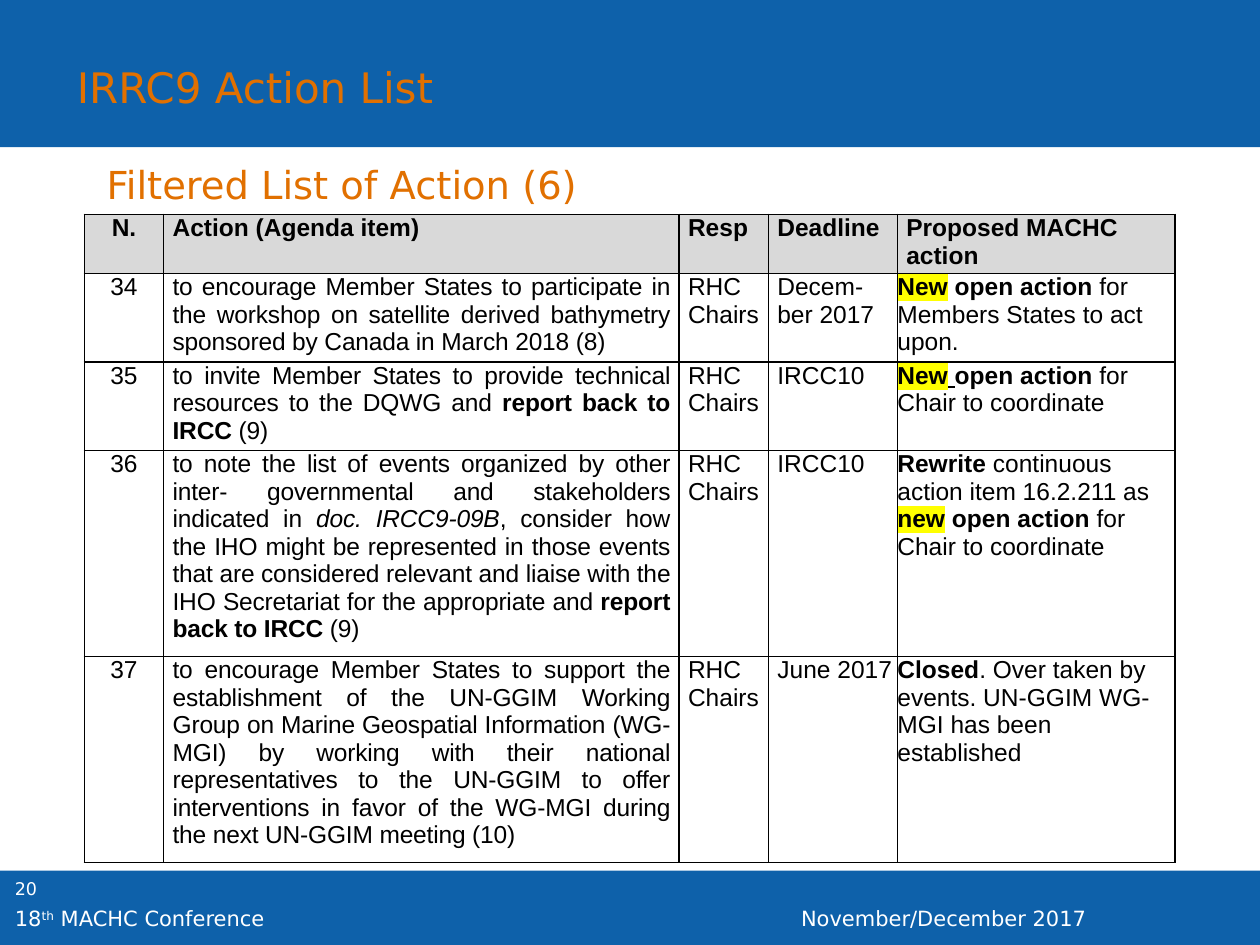
import pptx
import pptx.dml.color
import pptx.enum.shapes
import pptx.enum.text
import pptx.oxml
import pptx.oxml.ns
import pptx.util
from pptx.util import Cm

ALIGN = pptx.enum.text.PP_ALIGN
BLUE, ORANGE, WHITE, BLACK, GREY = "0E61AA", "E17000", "FFFFFF", "000000", "D9D9D9"
HEADING_FONT, TABLE_FONT = "DejaVu Sans", "Arial"

BANDS = [(0, 2.97), (17.55, 1.5)]

LABELS = [
    (0.05, 17.58, 1.98, 1.02, True, 10, WHITE, [("20", "")]),
    (15.9, 18.14, 9.5, 0.61, True, 12, WHITE, [("November/December 2017", "")]),
    (0.05, 18.14, 11.13, 0.61, True, 12, WHITE,
     [("18", ""), ("th", "superscript"), (" MACHC Conference", "")]),
    (1.9, 3.12, 10.59, 1.19, False, 22, ORANGE, [("Filtered List of Action (6)", "")]),
    (1.3, 1.12, 8.28, 1.27, False, 24, ORANGE, [("IRRC9 Action List", "")]),
]

HEADERS = ["N.", "Action (Agenda item)", "Resp", "Deadline", "Proposed MACHC action"]
ACTIONS = [
    ("34",
     [("to encourage Member States to participate in the workshop on satellite derived "
       "bathymetry sponsored by Canada in March 2018 (8)", "")],
     "RHC Chairs", "Decem-ber 2017",
     [("New", "bold highlight"), (" ", ""), ("open action", "bold"),
      (" for Members States to act upon.", "")]),
    ("35",
     [("to invite Member States to provide technical resources to the DQWG and ", ""),
      ("report back to IRCC ", "bold"), ("(9)", "")],
     "RHC Chairs", "IRCC10",
     [("New", "bold highlight"), (" ", "bold underline"), ("open action", "bold"),
      (" for Chair to coordinate", "")]),
    ("36",
     [("to note the list of events organized by other inter- governmental and "
       "stakeholders indicated in ", ""), ("doc. IRCC9-09B", "italic"),
      (", consider how the IHO might be represented in those events that are considered "
       "relevant and liaise with the IHO Secretariat for the appropriate and ", ""),
      ("report back to IRCC ", "bold"), ("(9)", "")],
     "RHC Chairs", "IRCC10",
     [("Rewrite", "bold"), (" continuous action item 16.2.211 as ", ""),
      ("new", "bold highlight"), (" ", ""), ("open action", "bold"),
      (" for Chair to coordinate", "")]),
    ("37",
     [("to encourage Member States to support the establishment of the UN-GGIM Working "
       "Group on Marine Geospatial Information (WG-MGI) by working with their national "
       "representatives to the UN-GGIM to offer interventions in favor of the WG-MGI "
       "during the next UN-GGIM meeting (10)", "")],
     "RHC Chairs", "June 2017",
     [("Closed", "bold"),
      (". Over taken by events. UN-GGIM WG-MGI has been established", "")]),
]
TABLE_LEFT, TABLE_TOP = 1.7, 4.32
COLUMN_WIDTHS = [1.6, 10.39, 1.8, 2.6, 5.6]
ROW_HEIGHTS = [1.19, 1.79, 1.78, 4.15, 4.15]
NUMBER, ACTION, PROPOSAL = 0, 1, 4
INDENT = Cm(0.18)


def color(value):
    return pptx.dml.color.RGBColor.from_string(value)


def element(xml):
    return pptx.oxml.parse_xml(xml.replace(">", f" {pptx.oxml.ns.nsdecls('a')}>", 1))


def add_spans(para, spans, size, font, ink, spacing=0):
    for text, style in spans:
        span = para.add_run()
        span.text = text
        span.font.size = pptx.util.Pt(size)
        span.font.bold = "bold" in style
        span.font.italic = "italic" in style
        span.font.underline = "underline" in style
        span.font.color.rgb = color(ink)
        properties = span._r.get_or_add_rPr()
        if "highlight" in style:
            properties.append(element('<a:highlight><a:srgbClr val="FFFF00"/></a:highlight>'))
        if "superscript" in style:
            properties.set("baseline", "30000")
        if spacing:
            properties.set("spc", str(spacing))
        span.font.name = font


def add_band(page, top, height):
    band = page.shapes.add_shape(pptx.enum.shapes.MSO_SHAPE.RECTANGLE,
                                 0, Cm(top), Cm(25.4), Cm(height))
    band.shadow.inherit = False
    band.fill.solid()
    band.fill.fore_color.rgb = color(BLUE)
    band.line.fill.background()


def add_label(page, left, top, width, height, wrap, size, ink, spans):
    box = page.shapes.add_textbox(Cm(left), Cm(top), Cm(width), Cm(height))
    box.text_frame.word_wrap = wrap
    add_spans(box.text_frame.paragraphs[0], spans, size, HEADING_FONT, ink)


def add_borders(cell):
    properties = cell._tc.get_or_add_tcPr()
    for position, side in enumerate(("lnL", "lnR", "lnT", "lnB")):
        properties.insert(position, element(
            f'<a:{side} w="12700"><a:solidFill><a:srgbClr val="{BLACK}"/>'
            f'</a:solidFill></a:{side}>'))


def fill_cell(cell, content, row, column):
    spans = [(content, "" if row else "bold")] if isinstance(content, str) else content
    flush = column == NUMBER or (column == PROPOSAL and row)
    cell.margin_left = 0 if flush else INDENT
    cell.margin_right = INDENT if column == ACTION else 0
    cell.margin_top = cell.margin_bottom = 0
    if row:
        cell.fill.background()
    else:
        cell.fill.solid()
        cell.fill.fore_color.rgb = color(GREY)
    add_borders(cell)
    para = cell.text_frame.paragraphs[0]
    para.alignment = ALIGN.LEFT
    if column == NUMBER:
        para.alignment = ALIGN.CENTER
    elif column == ACTION and row:
        para.alignment = ALIGN.JUSTIFY
    tight = -10 if column == ACTION and row else 0
    add_spans(para, spans, 14, TABLE_FONT, BLACK, tight)


def add_action_table(page):
    rows = [HEADERS, *ACTIONS]
    table = page.shapes.add_table(
        len(rows), len(HEADERS), Cm(TABLE_LEFT), Cm(TABLE_TOP),
        Cm(sum(COLUMN_WIDTHS)), Cm(sum(ROW_HEIGHTS))).table
    table.horz_banding = False
    for column, width in zip(table.columns, COLUMN_WIDTHS):
        column.width = Cm(width)
    for line, height in zip(table.rows, ROW_HEIGHTS):
        line.height = Cm(height)
    for row, contents in enumerate(rows):
        for column, content in enumerate(contents):
            fill_cell(table.cell(row, column), content, row, column)


def main():
    deck = pptx.Presentation()
    deck.slide_width, deck.slide_height = Cm(25.4), Cm(19.05)
    page = deck.slides.add_slide(deck.slide_layouts[6])
    for band in BANDS:
        add_band(page, *band)
    for label in LABELS:
        add_label(page, *label)
    add_action_table(page)
    deck.save("out.pptx")


if __name__ == "__main__":
    main()
